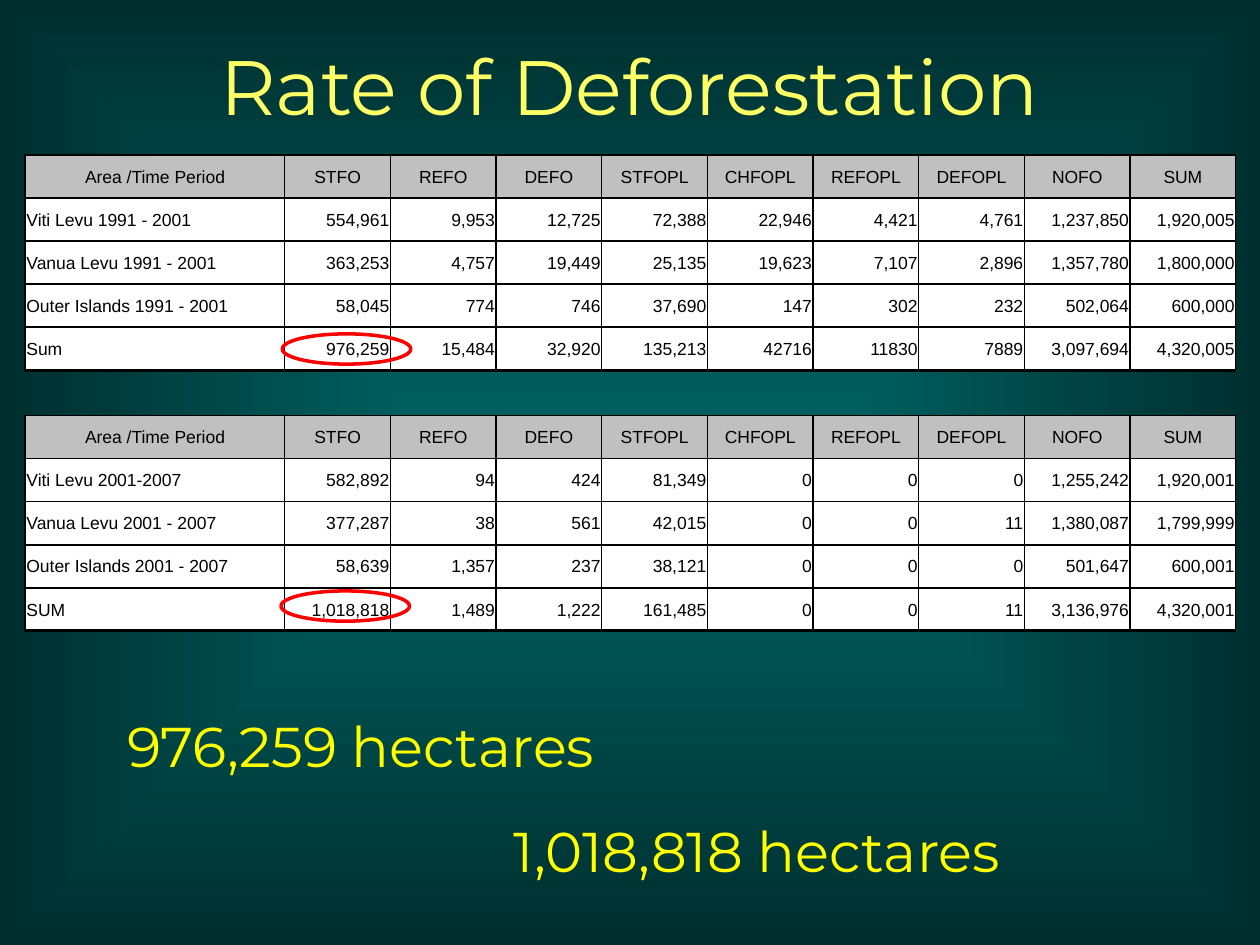
from lxml import etree
from pptx import Presentation, util as u
from pptx.dml.color import RGBColor
from pptx.enum import shapes, text
from pptx.oxml import parse_xml
from pptx.oxml.ns import nsdecls, qn

WIDTH, HEIGHT = 10, 7.5
LABEL_WIDTH, GAP_HEIGHT = 2.06, 0.36
NO_STYLE = "{2D5ABB26-0587-4C30-8999-92F81FD0307C}"
HEADER = "Area /Time Period|STFO|REFO|DEFO|STFOPL|CHFOPL|REFOPL|DEFOPL|NOFO|SUM"
PERIODS = [
    [
        "Viti Levu 1991 - 2001|554,961|9,953|12,725|72,388|22,946|4,421|4,761|1,237,850|1,920,005",
        "Vanua Levu 1991 - 2001|363,253|4,757|19,449|25,135|19,623|7,107|2,896|1,357,780|1,800,000",
        "Outer Islands 1991 - 2001|58,045|774|746|37,690|147|302|232|502,064|600,000",
        "Sum|976,259|15,484|32,920|135,213|42716|11830|7889|3,097,694|4,320,005",
    ],
    [
        "Viti Levu 2001-2007|582,892|94|424|81,349|0|0|0|1,255,242|1,920,001",
        "Vanua Levu 2001 - 2007|377,287|38|561|42,015|0|0|11|1,380,087|1,799,999",
        "Outer Islands 2001 - 2007|58,639|1,357|237|38,121|0|0|0|501,647|600,001",
        "SUM|1,018,818|1,489|1,222|161,485|0|0|11|3,136,976|4,320,001",
    ],
]


def color(value):
    """Turn a hex string into a colour."""
    return RGBColor.from_string(value)


def inches(box):
    """Turn a box in inches into slide lengths."""
    return [u.Inches(length) for length in box]


def write(frame, words, size, font, fill, align=text.PP_ALIGN.LEFT):
    """Fill a text frame with one formatted paragraph."""
    paragraph = frame.paragraphs[0]
    paragraph.alignment = align
    run = paragraph.add_run()
    run.text = words
    run.font.size, run.font.name = u.Pt(size), font
    run.font.color.rgb = color(fill)


def paint_background(slide):
    """Spread a gradient from the centre of the slide to its edges."""
    fill = slide.background.fill
    fill.gradient()
    for stop, position, value in zip(fill.gradient_stops, (0, 1), ("006666", "002F2F")):
        stop.position, stop.color.rgb = position, color(value)
    linear = next(slide.background._cSld.iter(qn("a:lin")))
    linear.getparent().replace(linear, parse_xml(
        f'<a:path {nsdecls("a")} path="shape">'
        '<a:fillToRect l="50000" t="50000" r="50000" b="50000"/></a:path>'))


def add_title(slide, box, words):
    """Move the title placeholder into the box and write it."""
    title = slide.shapes.title
    title.left, title.top, title.width, title.height = inches(box)
    title.text_frame.vertical_anchor = text.MSO_ANCHOR.MIDDLE
    write(title.text_frame, words, 44, "Montserrat", "FFFF66", text.PP_ALIGN.CENTER)


def set_borders(cell, **widths):
    """Draw black cell borders, given side letters and widths in points."""
    properties = cell._tc.get_or_add_tcPr()
    for side, width in widths.items():
        line = etree.SubElement(properties, qn(f"a:ln{side}"), w=str(u.Pt(width)))
        solid = etree.SubElement(line, qn("a:solidFill"))
        etree.SubElement(solid, qn("a:srgbClr"), val="000000")


def format_cell(cell, words, align, fill, bottom):
    """Write one bordered cell of a period."""
    set_borders(cell, L=1, R=1, T=1, B=bottom)
    cell.fill.solid()
    cell.fill.fore_color.rgb = color(fill)
    write(cell.text_frame, words, 10, "Arial", "000000", align)


def add_area_table(slide, box):
    """Stack the periods in one table, with an open row between them."""
    rows = [HEADER, *PERIODS[0], None, HEADER, *PERIODS[1]]
    columns = HEADER.count("|") + 1
    frame = slide.shapes.add_table(len(rows), columns, *inches(box))
    table = frame.table
    next(frame._element.iter(qn("a:tableStyleId"))).text = NO_STYLE
    table.first_row = table.horz_banding = False
    for index, column in enumerate(table.columns):
        share = (box[2] - LABEL_WIDTH) / (columns - 1)
        column.width = u.Inches(share if index else LABEL_WIDTH)
    for row, line in zip(table.rows, rows):
        row.height = u.Inches((box[3] - GAP_HEIGHT) / (len(rows) - 1) if line else GAP_HEIGHT)
        for index, cell in enumerate(row.cells):
            cell.margin_left = cell.margin_right = cell.margin_top = u.Inches(0.01)
            cell.margin_bottom = 0
            cell.vertical_anchor = text.MSO_ANCHOR.MIDDLE
            if line is None:
                set_borders(cell, T=2, B=1)
                continue
            header = line == HEADER
            align = text.PP_ALIGN.RIGHT if index else text.PP_ALIGN.LEFT
            format_cell(cell, line.split("|")[index],
                        text.PP_ALIGN.CENTER if header else align,
                        "C0C0C0" if header else "FFFFFF",
                        2 if line.lower().startswith("sum") else 1)


def add_ring(slide, box):
    """Circle a total in red."""
    ring = slide.shapes.add_shape(shapes.MSO_SHAPE.OVAL, *inches(box))
    ring.shadow.inherit = False
    ring.fill.background()
    ring.line.color.rgb = color("FF0000")
    ring.line.width = u.Pt(2)


def add_total(slide, box, words):
    """Write a large total in the box."""
    frame = slide.shapes.add_textbox(*inches(box)).text_frame
    frame.word_wrap = False
    frame.auto_size = text.MSO_AUTO_SIZE.SHAPE_TO_FIT_TEXT
    write(frame, words, 32, "Montserrat", "FFFF00")


def main():
    """Build the slide and save it."""
    presentation = Presentation()
    presentation.slide_width, presentation.slide_height = inches((WIDTH, HEIGHT))
    slide = presentation.slides.add_slide(presentation.slide_layouts[5])
    paint_background(slide)
    add_title(slide, (0.05 * WIDTH, 0.05, 0.9 * WIDTH, 1.25), "Rate of Deforestation")
    add_area_table(slide, (0.2, 1.23, 9.61, 3.78))
    for left, top in ((2.24, 2.65), (2.23, 4.69)):
        add_ring(slide, (left, top, 1.02, 0.24))
    add_total(slide, (0.91, 5.6, 4.48, 0.64), "976,259 hectares")
    add_total(slide, (3.98, 6.43, 4.93, 0.64), "1,018,818 hectares")
    presentation.save("out.pptx")


if __name__ == "__main__":
    main()
